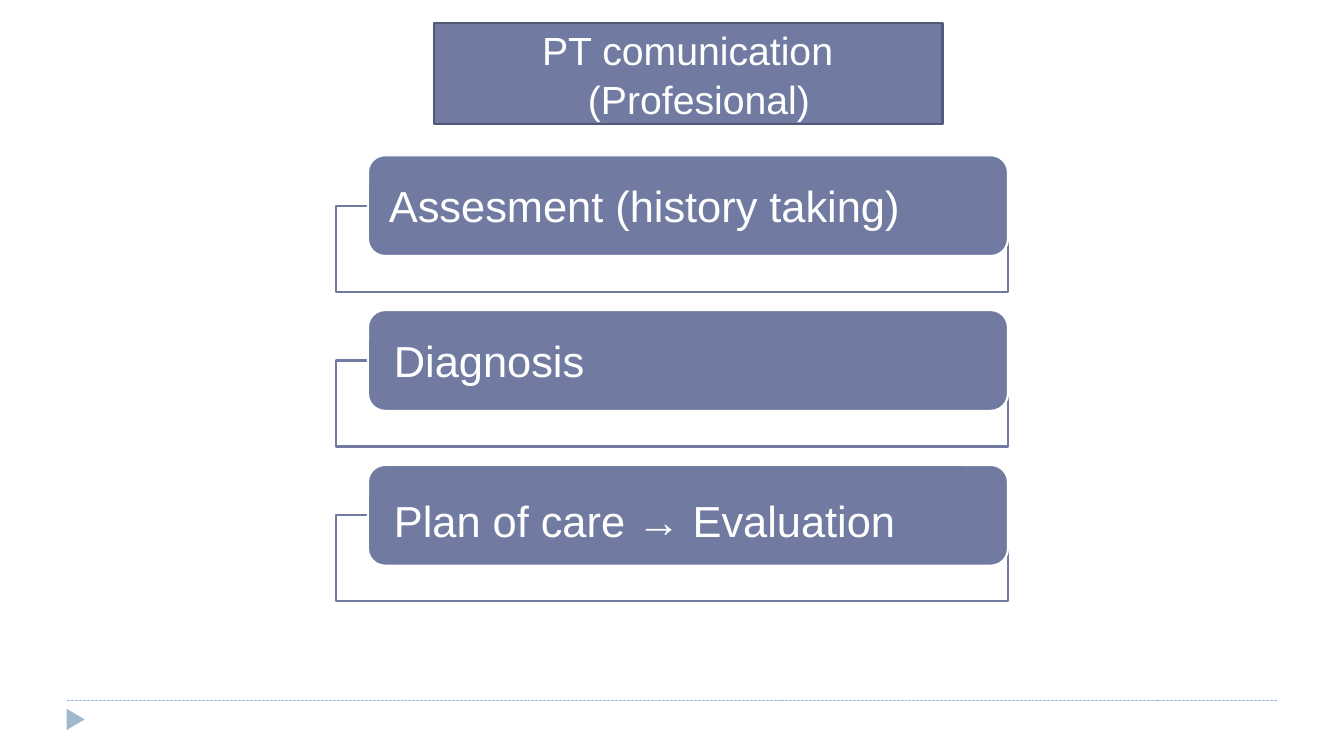
from lxml import etree
from pptx import Presentation
from pptx.dml.color import RGBColor
from pptx.enum.dml import MSO_LINE
from pptx.enum.shapes import MSO_CONNECTOR, MSO_SHAPE
from pptx.enum.text import MSO_ANCHOR, MSO_AUTO_SIZE, PP_ALIGN
from pptx.oxml.ns import qn
from pptx.util import Pt

RECTANGLE = MSO_SHAPE.RECTANGLE
ROUNDED = MSO_SHAPE.ROUNDED_RECTANGLE
STRAIGHT = MSO_CONNECTOR.STRAIGHT
DASH = MSO_LINE.SQUARE_DOT
MIDDLE = MSO_ANCHOR.MIDDLE
LEFT = PP_ALIGN.LEFT
NO_AUTOFIT = MSO_AUTO_SIZE.NONE
TITLE_ONLY = 5

COLORS = {"card": "717BA2", "edge": "525877", "accent": "9FB8CD", "white": "FFFFFF"}
FONT = "Arial"
LINE_WIDTH = 1.56

CARD_LEFT, CARD_TOP, CARD_WIDTH, CARD_HEIGHT = 262.8, 110.9, 457.2, 72
CARD_PITCH = 110.6
CARD_INSET = 15
FRAME_LEFT, FRAME_WIDTH, FRAME_HEIGHT = 240, 480, 61.5


class SlideBuilder:
    def __init__(self, presentation):
        self.slide = presentation.slides.add_slide(presentation.slide_layouts[TITLE_ONLY])
        self.shapes = self.slide.shapes

    def color(self, name):
        return RGBColor.from_string(COLORS[name])

    def paint(self, shape, fill=None, line=None):
        shape.shadow.inherit = False
        if fill:
            shape.fill.solid()
            shape.fill.fore_color.rgb = self.color(fill)
        else:
            shape.fill.background()
        if line:
            shape.line.color.rgb = self.color(line)
            shape.line.width = Pt(LINE_WIDTH)
        else:
            shape.line.fill.background()

    def box(self, kind, left, top, width, height, fill=None, line=None):
        shape = self.shapes.add_shape(kind, Pt(left), Pt(top), Pt(width), Pt(height))
        self.paint(shape, fill, line)
        return shape

    def label(self, shape, text, size, inset_left=0, inset_top=0):
        frame = shape.text_frame
        frame.text = text
        frame.word_wrap = True
        frame.auto_size = NO_AUTOFIT
        frame.vertical_anchor = MIDDLE
        frame.margin_left, frame.margin_top = Pt(inset_left), Pt(inset_top)
        frame.margin_right = frame.margin_bottom = 0
        paragraph = frame.paragraphs[0]
        paragraph.alignment = LEFT
        paragraph.font.name = FONT
        paragraph.font.size = Pt(size)
        paragraph.font.color.rgb = self.color("white")
        return paragraph

    def card(self, top):
        self.box(RECTANGLE, FRAME_LEFT, top + CARD_HEIGHT / 2,
                 FRAME_WIDTH, FRAME_HEIGHT, line="card")
        card = self.box(ROUNDED, CARD_LEFT, top, CARD_WIDTH, CARD_HEIGHT, "card", "white")
        card.adjustments[0] = 0.17
        return card

    def title_over(self, card):
        """Move the title placeholder onto the card, in front of it."""
        title = self.shapes.title
        title.left, title.top = card.left, card.top
        title.width, title.height = card.width, card.height
        card._element.addnext(title._element)
        return title

    def header(self, text):
        header = self.box(RECTANGLE, 310.3, 16.6, 363, 72, "card", "edge")
        paragraph = self.label(header, text, 28)
        paragraph.line_spacing = 1.04
        properties = paragraph._p.get_or_add_pPr()
        properties.set("marL", str(Pt(109.7)))
        properties.set("indent", str(Pt(-32.7)))

    def footer(self):
        rule = self.shapes.add_connector(STRAIGHT, Pt(48), Pt(500.4), Pt(912), Pt(500.4))
        rule.line.color.rgb = self.color("accent")
        rule.line.width = Pt(0.72)
        rule.line.dash_style = DASH
        etree.SubElement(rule._element.spPr, qn("a:effectLst"))
        builder = self.shapes.build_freeform(Pt(47.5), Pt(506.3))
        builder.add_line_segments([(Pt(47.5), Pt(521.5)), (Pt(60.5), Pt(513.9))])
        self.paint(builder.convert_to_shape(), "accent")


def main():
    presentation = Presentation()
    presentation.slide_width, presentation.slide_height = Pt(960), Pt(540)
    builder = SlideBuilder(presentation)
    builder.footer()
    steps = [("Assesment (history taking)", 0), ("Diagnosis", 0),
             ("Plan of care → Evaluation", 7)]
    for index, (text, inset_top) in enumerate(steps):
        card = builder.card(CARD_TOP + index * CARD_PITCH)
        holder = builder.title_over(card) if index == 0 else card
        builder.label(holder, text, 31, CARD_INSET, inset_top)
    builder.header("PT comunication (Profesional)")
    presentation.save("out.pptx")


if __name__ == "__main__":
    main()
